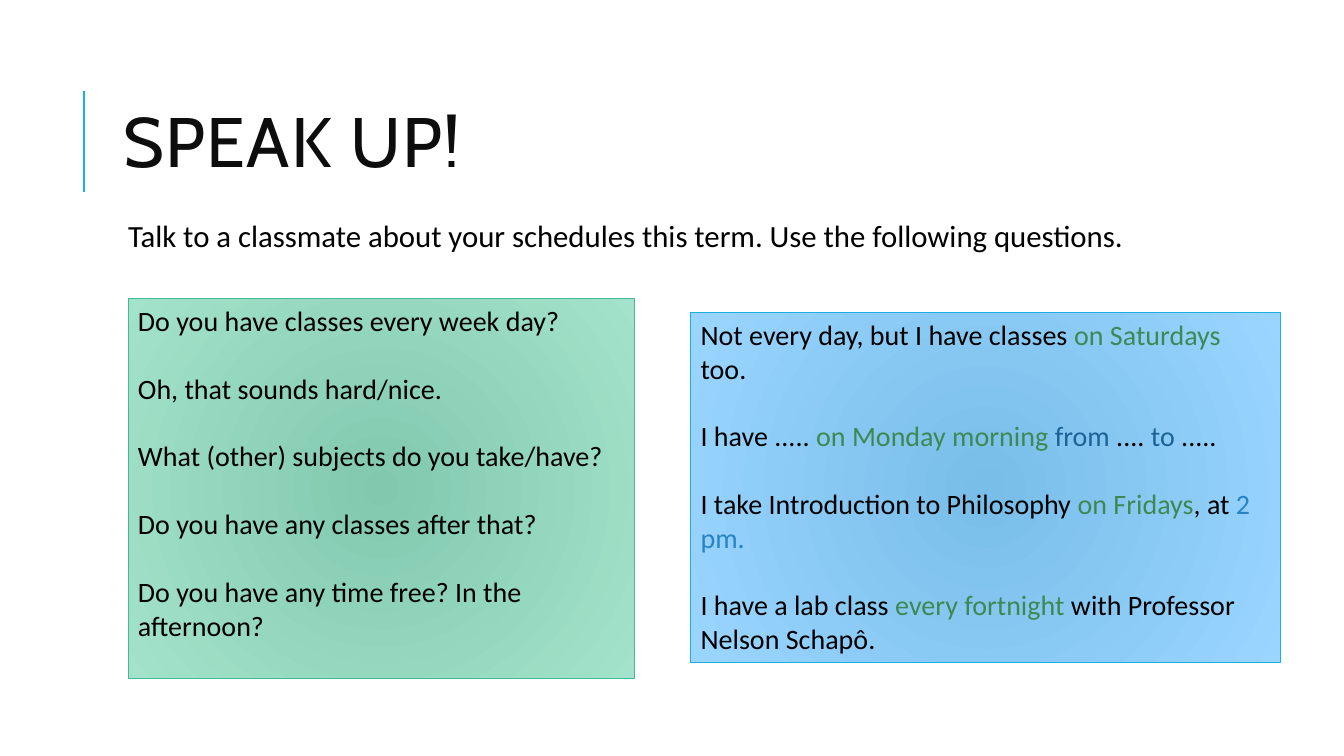
from dataclasses import dataclass

from lxml import etree
from pptx import Presentation
from pptx.dml.color import RGBColor
from pptx.enum.dml import MSO_FILL
from pptx.enum.shapes import MSO_CONNECTOR, MSO_SHAPE
from pptx.enum.text import MSO_ANCHOR, MSO_AUTO_SIZE, PP_ALIGN
from pptx.oxml.ns import qn
from pptx.util import Inches, Pt

LEFT = PP_ALIGN.LEFT
TOP, MIDDLE = MSO_ANCHOR.TOP, MSO_ANCHOR.MIDDLE
NO_AUTOFIT = MSO_AUTO_SIZE.NONE
RECTANGLE = MSO_SHAPE.RECTANGLE
STRAIGHT = MSO_CONNECTOR.STRAIGHT
GRADIENT = MSO_FILL.GRADIENT
TITLE_ONLY = 5


@dataclass(frozen=True)
class Theme:
    title_font: str = "Cabin"
    body_font: str = "Calibri"
    title_size: float = 50
    lead_size: float = 22
    box_size: float = 20
    box_gap: float = 24.4
    title: str = "0D0D0D"
    text: str = "000000"
    day: str = "3E8853"
    span: str = "1D6294"
    hour: str = "2683C6"
    accent: str = "1CADE4"
    question_line: str = "42BA97"
    question_fill: tuple = ("81C8AF", "A4E3CB")
    answer_fill: tuple = ("78BEE9", "9AD5FF")


THEME = Theme()

QUESTIONS = [
    ["Do you have classes every week day?"],
    ["Oh, that sounds hard/nice."],
    ["What (other) subjects do you take/have?"],
    ["Do you have any classes after that?"],
    ["Do you have any time free? In the afternoon?"],
]
ANSWERS = [
    ["Not every day, but I have classes ", ("on Saturdays ", THEME.day), "too."],
    ["I have ..... ", ("on Monday morning ", THEME.day), ("from", THEME.span),
     " .... ", ("to ", THEME.span), "....."],
    ["I take Introduction to Philosophy ", ("on Fridays", THEME.day), ", at ",
     ("2 pm.", THEME.hour)],
    ["I have a lab class ", ("every fortnight ", THEME.day),
     "with Professor Nelson Schapô."],
]


def write_text(frame, paragraphs, *, font, size, color, anchor=TOP, gap=0,
               line_spacing=None, tracking=None):
    frame.word_wrap = True
    frame.auto_size = NO_AUTOFIT
    frame.vertical_anchor = anchor
    for index, pieces in enumerate(paragraphs):
        paragraph = frame.add_paragraph() if index else frame.paragraphs[0]
        paragraph.alignment = LEFT
        paragraph.space_before = Pt(gap if index else 0)
        if line_spacing:
            paragraph.line_spacing = line_spacing
        for piece in pieces:
            words, piece_color = (piece, color) if isinstance(piece, str) else piece
            run = paragraph.add_run()
            run.text = words
            run.font.name = font
            run.font.size = Pt(size)
            run.font.color.rgb = RGBColor.from_string(piece_color)
            if tracking:
                run.font._element.set("spc", str(tracking * 100))


class SlideBuilder:
    def __init__(self, presentation, theme):
        self.theme = theme
        self.slide = presentation.slides.add_slide(
            presentation.slide_layouts[TITLE_ONLY])

    def title(self, words, left, top, width, height):
        shape = self.slide.shapes.title
        shape.left, shape.top = Inches(left), Inches(top)
        shape.width, shape.height = Inches(width), Inches(height)
        write_text(shape.text_frame, [[words]], font=self.theme.title_font,
                   size=self.theme.title_size, color=self.theme.title,
                   anchor=MIDDLE, line_spacing=0.8, tracking=1)

    def rule(self, left, top, bottom):
        line = self.slide.shapes.add_connector(
            STRAIGHT, Inches(left), Inches(top), Inches(left), Inches(bottom))
        line.line.color.rgb = RGBColor.from_string(self.theme.accent)
        line.line.width = Pt(1.5)
        etree.SubElement(line._element.spPr, qn("a:effectLst"))

    def lead(self, words, left, top, width, height):
        shape = self.slide.shapes.add_textbox(
            Inches(left), Inches(top), Inches(width), Inches(height))
        frame = shape.text_frame
        frame.margin_left = Inches(0.15)
        frame.margin_right = frame.margin_top = frame.margin_bottom = Inches(0.05)
        write_text(frame, [[words]], font=self.theme.body_font,
                   size=self.theme.lead_size, color=self.theme.text,
                   line_spacing=0.9)

    def box(self, paragraphs, left, top, width, height, fill, line):
        shape = self.slide.shapes.add_shape(
            RECTANGLE, Inches(left), Inches(top), Inches(width), Inches(height))
        shape.shadow.inherit = False
        shape.line.color.rgb = RGBColor.from_string(line)
        shape.line.width = Pt(0.75)
        self.radial_fill(shape, fill)
        write_text(shape.text_frame, paragraphs, font=self.theme.body_font,
                   size=self.theme.box_size, color=self.theme.text,
                   gap=self.theme.box_gap)

    def radial_fill(self, shape, colors):
        shape.fill.gradient()
        assert shape.fill.type == GRADIENT
        for stop, position, color in zip(shape.fill.gradient_stops, (0, 1), colors):
            stop.position = position
            stop.color.rgb = RGBColor.from_string(color)
        gradient = shape._element.spPr.find(qn("a:gradFill"))
        gradient.remove(gradient.find(qn("a:lin")))
        circle = etree.SubElement(gradient, qn("a:path"), {"path": "circle"})
        etree.SubElement(circle, qn("a:fillToRect"), dict.fromkeys("ltrb", "100000"))


def main():
    presentation = Presentation()
    presentation.slide_width = Inches(13.33)
    presentation.slide_height = Inches(7.5)
    builder = SlideBuilder(presentation, THEME)
    builder.rule(0.83, 0.9, 1.9)
    builder.title("SPEAK UP!", 1.12, 0.64, 10.63, 1.64)
    builder.lead("Talk to a classmate about your schedules this term. "
                 "Use the following questions.", 1.12, 2.14, 10.87, 0.82)
    builder.box(QUESTIONS, 1.27, 2.96, 5.02, 3.77,
                THEME.question_fill, THEME.question_line)
    builder.box(ANSWERS, 6.85, 3.1, 5.85, 3.47,
                THEME.answer_fill, THEME.accent)
    presentation.save("out.pptx")


if __name__ == "__main__":
    main()
